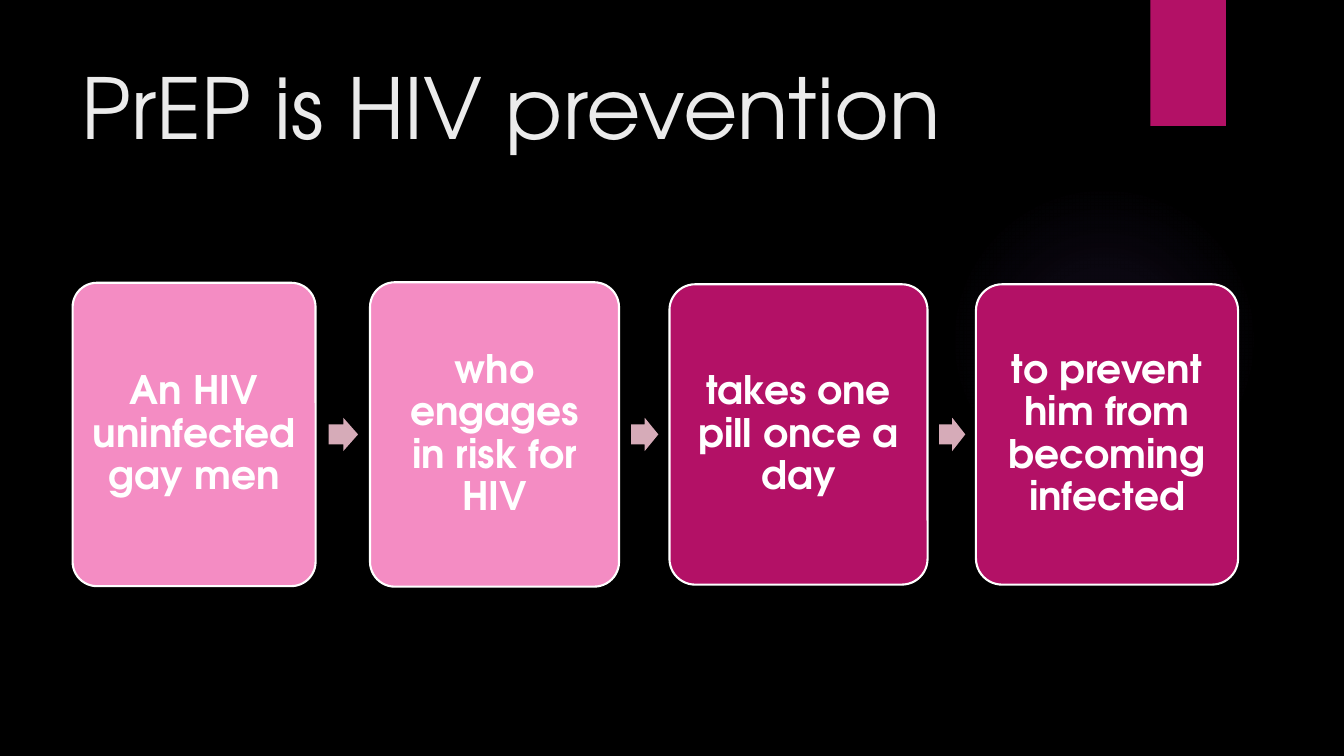
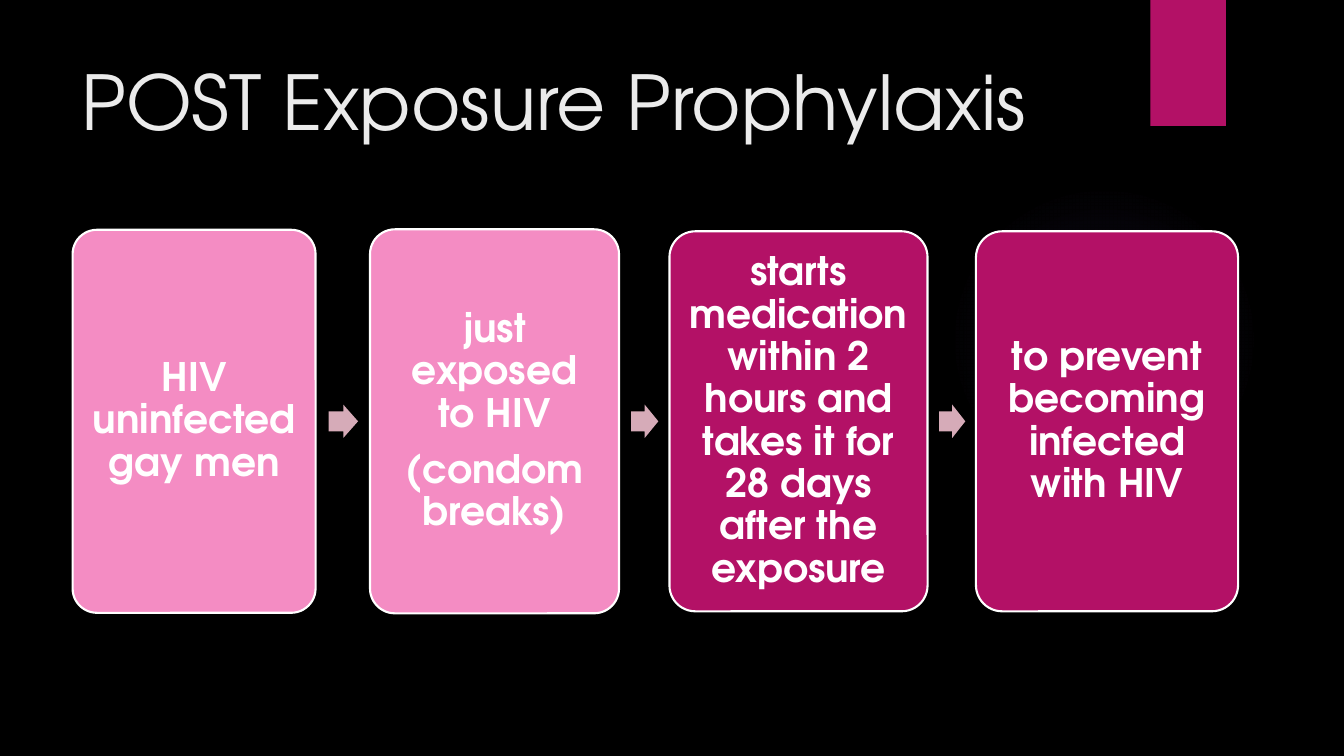
from dataclasses import dataclass

from lxml.etree import fromstring
from pptx import Presentation
from pptx.dml.color import RGBColor
from pptx.enum.shapes import MSO_SHAPE as Shape
from pptx.enum.text import MSO_ANCHOR as Anchor, PP_ALIGN as Align
from pptx.oxml.ns import nsdecls
from pptx.util import Inches, Pt


@dataclass(frozen=True)
class Theme:
    font: str = "TeX Gyre Adventor"
    background: str = "000000"
    title: str = "EBEBEB"
    text: str = "FFFFFF"
    light_box: str = "F48CC3"
    accent: str = "B31166"
    arrow: str = "D6ABB8"
    glow: str = "9B6BF2"
    step_size: int = 28
    outline: float = 1.5


THEME = Theme()

SLIDES = [
    {
        "title": "PrEP is HIV prevention",
        "title_size": 60,
        "middle": 4.31,
        "height": 2.98,
        "steps": [
            ["An HIV uninfected gay men"],
            ["who engages in risk for HIV"],
            ["takes one pill once a day"],
            ["to prevent him from becoming infected"],
        ],
    },
    {
        "title": "POST Exposure Prophylaxis",
        "title_size": 54,
        "middle": 4.18,
        "height": 3.77,
        "steps": [
            ["HIV uninfected gay men"],
            ["just exposed to HIV", "(condom breaks)"],
            ["starts medication within 2 hours and takes it for 28 days after the exposure"],
            ["to prevent becoming infected with HIV"],
        ],
    },
]

# Left, width, extra height and fill of each step box
COLUMNS = [
    (0.72, 2.41, 0.03, THEME.light_box),
    (3.67, 2.47, 0.04, THEME.light_box),
    (6.64, 2.56, 0, THEME.accent),
    (9.68, 2.6, 0, THEME.accent),
]
ARROW_HEIGHT = 0.33
ARROW_SHARE = 0.54  # part of the gap between two boxes
ARROW_OFFSET = 0.24

GLOW_STOPS = [(0, 7), (36, 6), (69, 0), (100, 0)]  # position and opacity, percent


def color(value):
    return RGBColor.from_string(value)


def add_shape(slide, kind, left, top, width, height, fill, outline=None):
    shape = slide.shapes.add_shape(
        kind, Inches(left), Inches(top), Inches(width), Inches(height))
    shape.shadow.inherit = False
    shape.fill.solid()
    shape.fill.fore_color.rgb = color(fill)
    if outline:
        shape.line.color.rgb = color(outline)
        shape.line.width = Pt(THEME.outline)
    else:
        shape.line.fill.background()
    return shape


def write_text(shape, lines, *, size, font_color, bold=False, align=Align.LEFT,
               anchor=Anchor.TOP, inset=None, line_spacing=None, space_after=None):
    frame = shape.text_frame
    frame.word_wrap = True
    frame.vertical_anchor = anchor
    if inset is not None:
        frame.margin_left = frame.margin_right = Inches(inset)
        frame.margin_top = frame.margin_bottom = Inches(inset)
    for index, line in enumerate(lines):
        paragraph = frame.add_paragraph() if index else frame.paragraphs[0]
        paragraph.alignment = align
        paragraph.line_spacing = line_spacing
        if space_after is not None:
            paragraph.space_after = Pt(space_after)
        run = paragraph.add_run()
        run.text = line
        run.font.name = THEME.font
        run.font.size = Pt(size)
        run.font.bold = bold
        run.font.color.rgb = color(font_color)


def add_glow(slide):
    """Draw the faint round glow, whose stops fade to transparent."""
    glow = add_shape(slide, Shape.OVAL, 9.41, 1.83, 3.08, 3.08, THEME.glow)
    stops = "".join(
        f'<a:gs pos="{position * 1000}"><a:srgbClr val="{THEME.glow}">'
        f'<a:alpha val="{opacity * 1000}"/></a:srgbClr></a:gs>'
        for position, opacity in GLOW_STOPS)
    gradient = fromstring(
        f'<a:gradFill {nsdecls("a")} rotWithShape="1"><a:gsLst>{stops}</a:gsLst>'
        '<a:path path="circle"><a:fillToRect l="50000" t="50000" r="50000" b="50000"/>'
        '</a:path></a:gradFill>')
    properties = glow.element.spPr
    solid = properties.find("{*}solidFill")
    properties.replace(solid, gradient)


def add_base_slide(presentation, title, title_size):
    slide = presentation.slides.add_slide(presentation.slide_layouts[6])
    slide.background.fill.solid()
    slide.background.fill.fore_color.rgb = color(THEME.background)
    add_glow(slide)
    add_shape(slide, Shape.RECTANGLE, 11.41, 0, 0.75, 1.25, THEME.accent)
    title_box = slide.shapes.add_textbox(
        Inches(0.71), Inches(0.5), Inches(10.29), Inches(1.53))
    write_text(title_box, [title], size=title_size, font_color=THEME.title)
    return slide


def add_process(slide, steps, middle, height):
    for index, (lines, column) in enumerate(zip(steps, COLUMNS)):
        left, width, extra, fill = column
        box_height = height + extra
        box = add_shape(slide, Shape.ROUNDED_RECTANGLE, left, middle - box_height / 2,
                        width, box_height, fill, THEME.text)
        box.adjustments[0] = 0.1
        write_text(box, lines, size=THEME.step_size, font_color=THEME.text, bold=True,
                   align=Align.CENTER, anchor=Anchor.MIDDLE, inset=0.12,
                   line_spacing=0.9, space_after=10)
        if index + 1 < len(COLUMNS):
            right = left + width
            gap = COLUMNS[index + 1][0] - right
            arrow = add_shape(slide, Shape.RIGHT_ARROW, right + ARROW_OFFSET * gap,
                              middle - ARROW_HEIGHT / 2, ARROW_SHARE * gap,
                              ARROW_HEIGHT, THEME.arrow)
            arrow.adjustments[0] = 0.6
            arrow.adjustments[1] = 0.5


def main():
    presentation = Presentation()
    presentation.slide_width = Inches(13.33)
    presentation.slide_height = Inches(7.5)
    for content in SLIDES:
        slide = add_base_slide(presentation, content["title"], content["title_size"])
        add_process(slide, content["steps"], content["middle"], content["height"])
    presentation.save("out.pptx")


if __name__ == "__main__":
    main()
